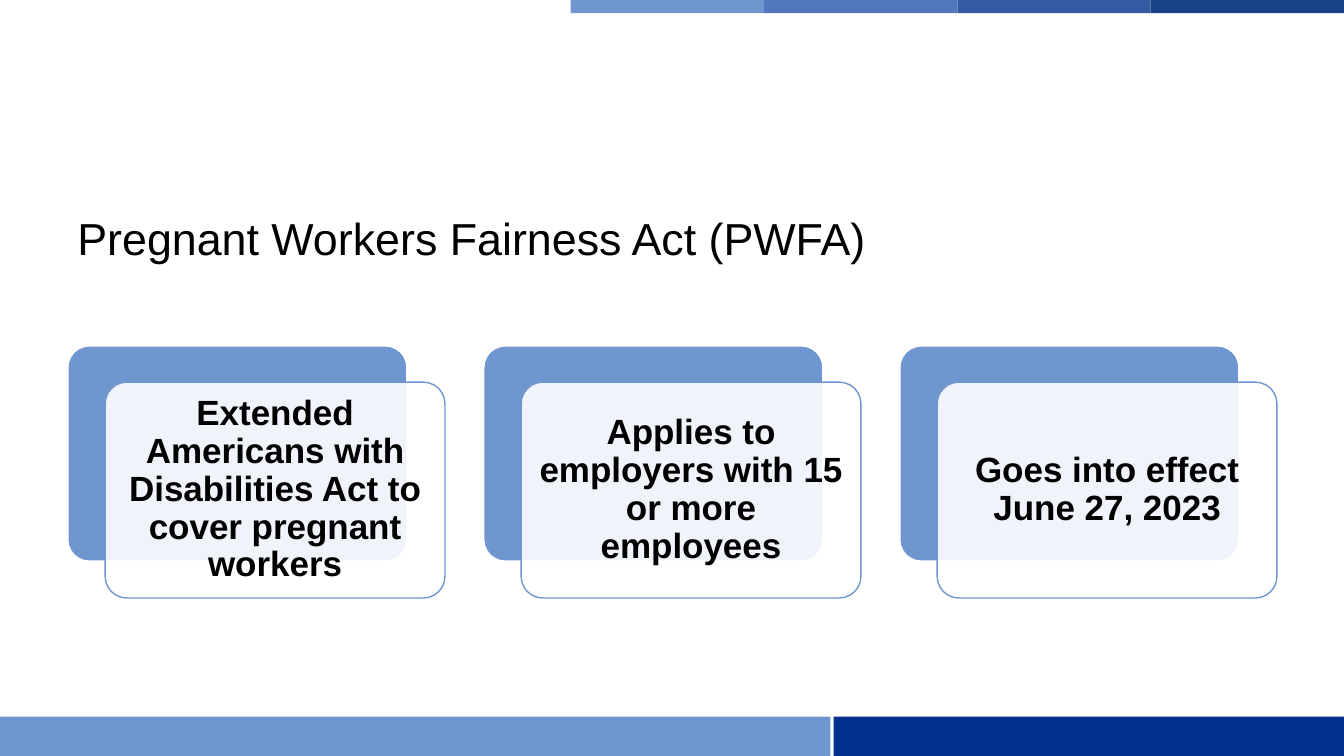
from dataclasses import dataclass

from lxml import etree
from pptx import Presentation
from pptx.dml.color import RGBColor
from pptx.enum.shapes import MSO_SHAPE
from pptx.enum.text import MSO_ANCHOR, PP_ALIGN
from pptx.oxml.ns import qn
from pptx.util import Cm, Pt

RECTANGLE = MSO_SHAPE.RECTANGLE
ROUNDED = MSO_SHAPE.ROUNDED_RECTANGLE
MIDDLE = MSO_ANCHOR.MIDDLE
LEFT, CENTER = PP_ALIGN.LEFT, PP_ALIGN.CENTER


@dataclass(frozen=True)
class Theme:
    """Colours, font and type sizes of the slide."""

    font: str = "Arial"
    text: str = "000000"
    white: str = "FFFFFF"
    light: str = "7096CF"
    navy: str = "00308F"
    top_bars: tuple = ("7096CF", "5077BB", "345BA1", "184286")
    title_size: int = 32
    card_size: int = 25


THEME = Theme()
SLIDE_WIDTH, SLIDE_HEIGHT = 33.87, 19.05
CARDS = (
    "Extended Americans with Disabilities Act to cover pregnant workers",
    "Applies to employers with 15 or more employees",
    "Goes into effect June 27, 2023",
)


def add_block(slide, kind, box, fill, line=None, line_width=1):
    """Add a filled shape in a box given in centimetres."""
    shape = slide.shapes.add_shape(kind, *map(Cm, box))
    shape.shadow.inherit = False
    shape.fill.solid()
    shape.fill.fore_color.rgb = RGBColor.from_string(fill)
    if line:
        shape.line.color.rgb = RGBColor.from_string(line)
        shape.line.width = Pt(line_width)
    else:
        shape.line.fill.background()
    if kind == ROUNDED:
        shape.adjustments[0] = 0.1
    return shape


def set_opacity(shape, percent):
    """Make the solid fill of a shape partly see-through."""
    color = shape.fill._xPr.find(qn("a:solidFill"))[0]
    etree.SubElement(color, qn("a:alpha"), val=str(percent * 1000))


def write_text(shape, text, size, bold, alignment, spacing):
    """Write one paragraph, vertically centred, into a shape."""
    frame = shape.text_frame
    frame.word_wrap = True
    frame.vertical_anchor = MIDDLE
    paragraph = frame.paragraphs[0]
    paragraph.text = text
    paragraph.alignment = alignment
    paragraph.line_spacing = spacing
    for name, value in {"name": THEME.font, "size": Pt(size), "bold": bold}.items():
        setattr(paragraph.font, name, value)
    paragraph.font.color.rgb = RGBColor.from_string(THEME.text)


def add_top_bars(slide, box):
    """Split the box into equal bars that grow darker."""
    left, top, width, height = box
    bar_width = width / len(THEME.top_bars)
    for index, color in enumerate(THEME.top_bars):
        add_block(slide, RECTANGLE, (left + index * bar_width, top, bar_width, height), color)


def add_footer(slide, box, split=20.93, gap=0.08):
    """Fill the box with a light bar and a navy bar."""
    left, top, width, height = box
    add_block(slide, RECTANGLE, (left, top, split, height), THEME.light)
    navy_box = (left + split + gap, top, width - split - gap, height)
    add_block(slide, RECTANGLE, navy_box, THEME.navy)


def add_title(slide, box, text):
    """Place the title in its box."""
    title = slide.shapes.add_textbox(*map(Cm, box))
    write_text(title, text, THEME.title_size, False, LEFT, 1.0)


def add_card(slide, box, text, shift_x=0.95, shift_y=0.92):
    """Place a blue card with a shifted white card on top."""
    left, top, width, height = box
    width, height = width - shift_x, height - shift_y
    add_block(slide, ROUNDED, (left, top, width, height), THEME.light, THEME.white, 1.5)
    front_box = (left + shift_x, top + shift_y, width, height)
    front = add_block(slide, ROUNDED, front_box, THEME.white, THEME.light)
    set_opacity(front, 90)
    for side in ("left", "top", "right", "bottom"):
        setattr(front.text_frame, f"margin_{side}", Cm(0.25))
    write_text(front, text, THEME.card_size, True, CENTER, 0.9)


def add_cards(slide, box, texts, gap=0.97):
    """Spread the cards evenly over the box."""
    left, top, width, height = box
    card_width = (width - gap * (len(texts) - 1)) / len(texts)
    for index, text in enumerate(texts):
        card_left = left + index * (card_width + gap)
        add_card(slide, (card_left, top, card_width, height), text)


def main():
    """Build and save the slide."""
    presentation = Presentation()
    presentation.slide_width = Cm(SLIDE_WIDTH)
    presentation.slide_height = Cm(SLIDE_HEIGHT)
    slide = presentation.slides.add_slide(presentation.slide_layouts[6])
    add_top_bars(slide, (14.38, 0, SLIDE_WIDTH - 14.38, 0.33))
    add_footer(slide, (0, 18.06, SLIDE_WIDTH, SLIDE_HEIGHT - 18.06))
    add_title(slide, (1.7, 4.72, 30.48, 2.54), "Pregnant Workers Fairness Act (PWFA)")
    add_cards(slide, (1.7, 8.71, 30.48, 6.36), CARDS)
    presentation.save("out.pptx")


if __name__ == "__main__":
    main()
